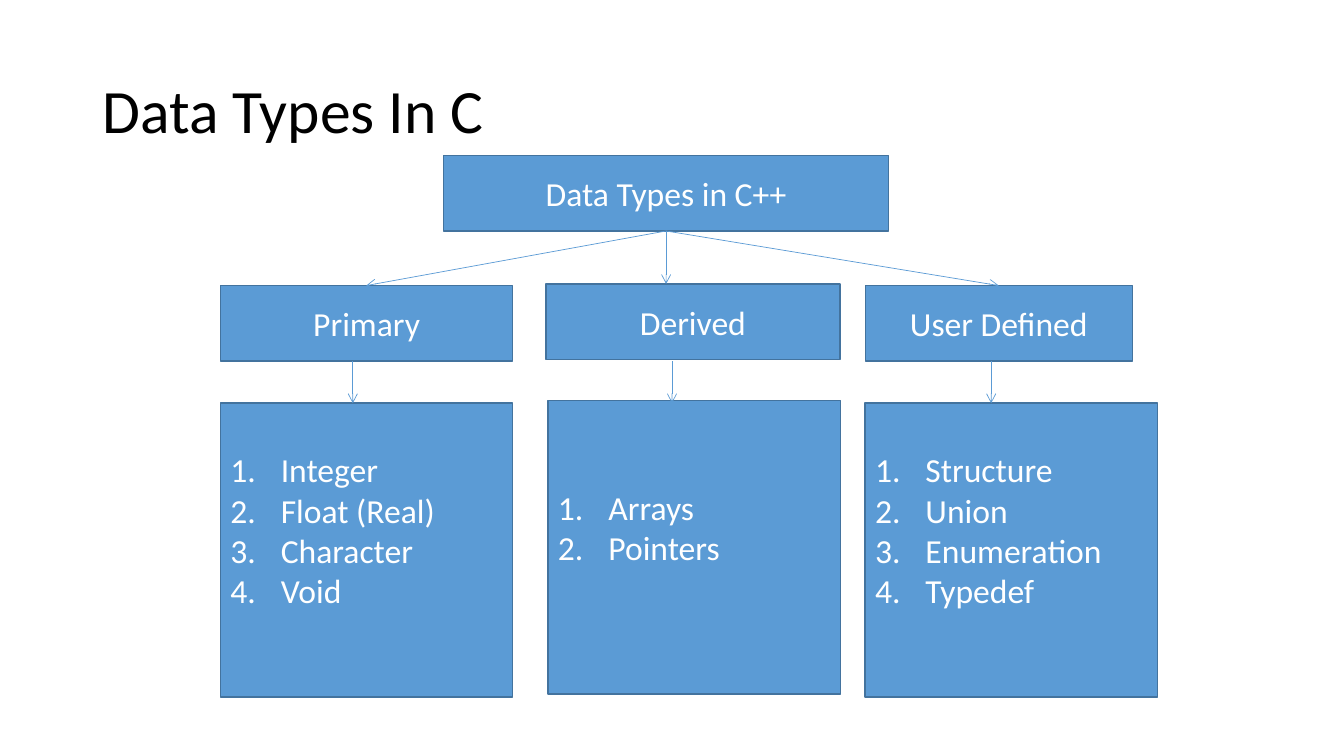
from dataclasses import dataclass

from lxml import etree
from pptx import Presentation
from pptx.dml.color import RGBColor
from pptx.enum.shapes import MSO_CONNECTOR, MSO_SHAPE
from pptx.enum.text import MSO_ANCHOR, MSO_AUTO_SIZE, PP_ALIGN
from pptx.oxml.ns import qn
from pptx.slide import Slide
from pptx.util import Inches, Pt

RECT = MSO_SHAPE.RECTANGLE
STRAIGHT = MSO_CONNECTOR.STRAIGHT
MIDDLE = MSO_ANCHOR.MIDDLE
FIXED = MSO_AUTO_SIZE.NONE
LEFT = PP_ALIGN.LEFT
CENTER = PP_ALIGN.CENTER

COLS, ROWS = 160, 90
CELL = Inches(1 / 12)
FONT = "Calibri"
BLUE, EDGE = "5B9BD5", "43739E"
WHITE, BLACK = "FFFFFF", "000000"


@dataclass
class Box:
    col: float
    row: float
    wide: float
    high: float
    lines: list[str]
    listed: bool = False


@dataclass
class Arrow:
    start: tuple[float, float]
    end: tuple[float, float]


ROOT = Box(52.8, 18.5, 53, 9, ["Data Types in C++"])
KINDS = [
    Box(26.25, 34, 34.8, 9, ["Primary"]),
    Box(65, 33.8, 35, 9, ["Derived"]),
    Box(103, 34, 31.8, 9, ["User Defined"]),
]
LISTS = [
    Box(26.25, 48, 34.8, 35, ["Integer", "Float (Real)", "Character", "Void"], True),
    Box(65.25, 47.65, 34.8, 35, ["Arrays", "Pointers"], True),
    Box(103, 48, 34.8, 35, ["Structure", "Union", "Enumeration", "Typedef"], True),
]
HUB = (ROOT.col + ROOT.wide / 2, ROOT.row + ROOT.high)
FAN = [Arrow(HUB, (col, kind.row)) for col, kind in zip((43.6, HUB[0], 118.9), KINDS)]
DROPS = [Arrow((col, 43), (col, 48)) for col in (42, 80, 118)]


def grid(count: float) -> int:
    return round(count * CELL)


def color(code: str) -> RGBColor:
    return RGBColor.from_string(code)


def write(para, text: str, size: int, code: str) -> None:
    run = para.add_run()
    run.text = text
    run.font.name = FONT
    run.font.size = Pt(size)
    run.font.color.rgb = color(code)


def number(para) -> None:
    props = para._p.get_or_add_pPr()
    props.set("marL", str(Inches(0.5)))
    props.set("indent", str(-Inches(0.5)))
    etree.SubElement(props, qn("a:buFont"), typeface="+mj-lt")
    etree.SubElement(props, qn("a:buAutoNum"), type="arabicPeriod")


def draw_title(slide: Slide, text: str) -> None:
    title = slide.shapes.title
    title.left, title.top = grid(11), grid(4.8)
    title.width, title.height = grid(138), grid(17.4)
    frame = title.text_frame
    frame.auto_size = FIXED
    frame.vertical_anchor = MIDDLE
    para = frame.paragraphs[0]
    para.alignment = LEFT
    para.line_spacing = 0.9
    write(para, text, 44, BLACK)


def draw_box(slide: Slide, box: Box) -> None:
    shape = slide.shapes.add_shape(
        RECT, grid(box.col), grid(box.row), grid(box.wide), grid(box.high)
    )
    shape.shadow.inherit = False
    shape.fill.solid()
    shape.fill.fore_color.rgb = color(BLUE)
    shape.line.color.rgb = color(EDGE)
    shape.line.width = Pt(1)
    frame = shape.text_frame
    frame.word_wrap = True
    frame.vertical_anchor = MIDDLE
    if box.listed:
        frame.margin_bottom = Inches(0.45)
    for spot, text in enumerate(box.lines):
        para = frame.add_paragraph() if spot else frame.paragraphs[0]
        para.alignment = LEFT if box.listed else CENTER
        if box.listed:
            number(para)
        write(para, text, 24, WHITE)


def draw_arrow(slide: Slide, arrow: Arrow) -> None:
    ends = [grid(part) for part in arrow.start + arrow.end]
    link = slide.shapes.add_connector(STRAIGHT, *ends)
    link.line.color.rgb = color(BLUE)
    link.line.width = Pt(0.5)
    props = link._element.spPr
    etree.SubElement(props.find(qn("a:ln")), qn("a:tailEnd"), type="arrow")
    etree.SubElement(props, qn("a:effectLst"))


def main() -> None:
    deck = Presentation()
    deck.slide_width, deck.slide_height = grid(COLS), grid(ROWS)
    slide = deck.slides.add_slide(deck.slide_layouts[5])
    draw_title(slide, "Data Types In C")
    for box in [ROOT, *KINDS, *LISTS]:
        draw_box(slide, box)
    for arrow in FAN + DROPS:
        draw_arrow(slide, arrow)
    deck.save("out.pptx")


if __name__ == "__main__":
    main()
